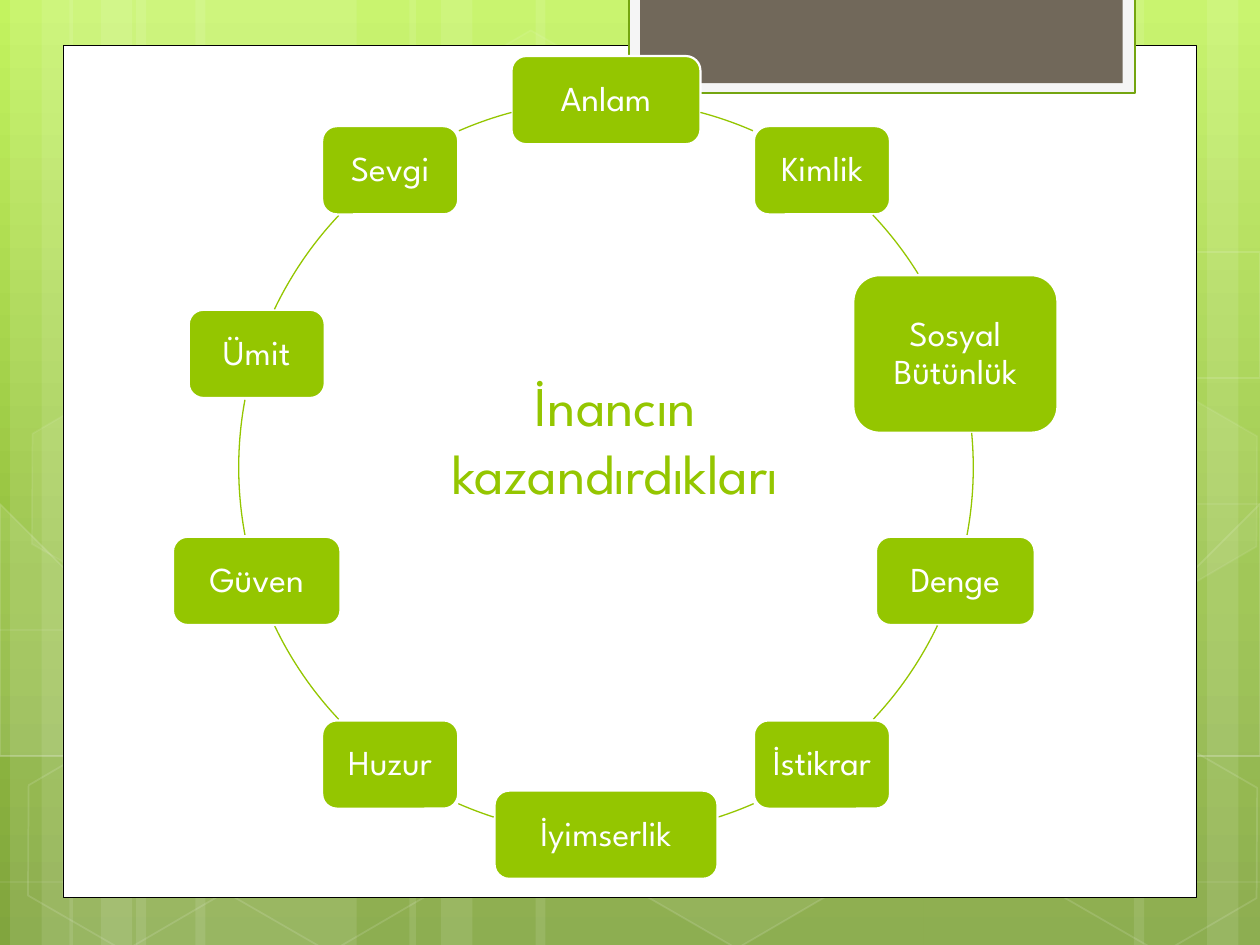
from math import cos, radians, sin

from lxml import etree
from pptx import Presentation
from pptx.dml.color import RGBColor
from pptx.enum.shapes import MSO_SHAPE
from pptx.enum.text import MSO_ANCHOR, PP_ALIGN
from pptx.oxml.ns import qn
from pptx.util import Inches, Pt

RECT = MSO_SHAPE.RECTANGLE
ROUND = MSO_SHAPE.ROUNDED_RECTANGLE
HEXAGON = MSO_SHAPE.HEXAGON
ARC = MSO_SHAPE.ARC
CENTER = PP_ALIGN.CENTER
MIDDLE = MSO_ANCHOR.MIDDLE
BOTTOM = MSO_ANCHOR.BOTTOM

FONT = "League Spartan"
GREEN = "94C600"
WHITE = "FFFFFF"
MID_X, MID_Y, RADIUS = 4.81, 3.71, 2.915

SKY = [(0, "C3F35F"), (62, "93BF3F"), (100, "81A53E")]

# left, width
BANDS = [(1.08, 1.75), (0.08, 0.5), (0.33, 0.83), (1.55, 1.75), (0.55, 0.5), (0.8, 0.83),
         (7.33, 1.75), (9.58, 0.5), (9, 0.83), (4.25, 3.08), (3.25, 0.5), (3.5, 0.83)]

# start point, then three points for each Bezier piece
WAVES = [
    [(0.07, 6.73), (0.61, 6.76), (1.15, 6.79), (1.9, 6.78), (2.65, 6.77), (3.58, 6.75),
     (4.58, 6.65), (5.58, 6.55), (7, 6.36), (7.92, 6.17), (8.83, 5.98), (9.77, 5.68),
     (10.07, 5.51)],
    [(0.07, 4.77), (0.36, 4.61), (0.65, 4.46), (1.21, 4.31), (1.78, 4.16), (2.59, 3.94),
     (3.47, 3.87), (4.36, 3.8), (5.44, 3.79), (6.54, 3.87), (7.64, 3.95), (9.47, 4.26),
     (10.07, 4.34)],
    [(0.06, 6.17), (1.27, 6.72), (2.47, 7.27), (3.34, 7.49)],
    [(0.07, 5.78), (0.38, 5.89), (0.7, 6), (1.28, 6.16), (1.86, 6.31), (2.73, 6.56),
     (3.57, 6.73), (4.4, 6.9), (5.45, 7.08), (6.28, 7.18), (7.11, 7.29), (8, 7.33),
     (8.53, 7.36), (9.05, 7.4), (9.19, 7.38), (9.45, 7.38), (9.71, 7.37), (9.89, 7.35),
     (10.07, 7.34)],
    [(2.42, 7.49), (2.6, 7.29), (2.78, 7.09), (3.02, 6.91), (3.26, 6.73), (3.6, 6.53),
     (3.88, 6.39), (4.16, 6.25), (4.33, 6.19), (4.7, 6.09), (5.06, 5.99), (5.73, 5.85),
     (6.08, 5.78), (6.44, 5.71), (6.49, 5.71), (6.8, 5.69), (7.11, 5.66), (7.6, 5.63),
     (7.94, 5.62), (8.29, 5.61), (8.86, 5.62), (8.86, 5.62), (9.08, 5.62), (9.3, 5.62),
     (9.53, 5.62), (9.71, 5.63), (9.88, 5.64), (10.06, 5.66)],
]

# left, top, fill opacity, line opacity
HEXAGONS = [(3.34, 0.36, 4, 8), (4.97, 5.89, 6, 12), (0.11, 5.91, 0, 12),
            (0.14, 3.12, 7, 8), (1.74, 5.92, 0, 12), (7.53, 4.53, 10, 12),
            (8.34, 5.93, 0, 12), (8.34, 3.14, 7, 8)]

# fill opacity, corners
CUT_HEXAGONS = [
    (10, [(0.08, 4.45), (0.19, 4.38), (0.96, 4.82), (0.95, 5.7), (0.2, 6.14), (0.08, 6.07)]),
    (4, [(9.26, 4.85), (10.01, 4.41), (10.09, 4.46), (10.09, 6.13), (10.02, 6.17),
         (9.26, 5.73)]),
    (0, [(9.26, 2.07), (10.01, 1.63), (10.1, 1.68), (10.09, 3.35), (10.02, 3.39),
         (9.26, 2.95)]),
]

# text, width, height, then the arc to the next box in degrees clockwise from the top
GAINS = [("Anlam", 1.5, 0.7, 14.9, 23.6),
         ("Kimlik", 1.08, 0.7, 46.6, 58.2),
         ("Sosyal Bütünlük", 1.62, 1.25, 84.6, 100.6),
         ("Denge", 1.26, 0.7, 115.5, 133.3),
         ("İstikrar", 1.08, 0.7, 156.3, 162.2),
         ("İyimserlik", 1.77, 0.7, 197.8, 203.7),
         ("Huzur", 1.08, 0.7, 226.7, 244.5),
         ("Güven", 1.33, 0.7, 259.4, 280.6),
         ("Ümit", 1.08, 0.7, 295.5, 313.3),
         ("Sevgi", 1.08, 0.7, 336.4, 345.1)]


def color(code):
    return RGBColor.from_string(code)


def paint(fill, code, alpha=100):
    """Fill with a colour at an opacity in percent; zero means no fill."""
    if not alpha:
        fill.background()
        return
    fill.solid()
    fill.fore_color.rgb = color(code)
    if alpha < 100:
        tint = fill._xPr.find(qn("a:solidFill"))[0]
        etree.SubElement(tint, qn("a:alpha"), val=str(alpha * 1000))


def style(shape, fill=WHITE, alpha=100, line=WHITE, weight=0, line_alpha=100):
    shape.shadow.inherit = False
    paint(shape.fill, fill, alpha)
    paint(shape.line.fill, line, line_alpha if weight else 0)
    if weight:
        shape.line.width = Pt(weight)


def add_shape(slide, kind, left, top, width, height, **look):
    shape = slide.shapes.add_shape(
        kind, Inches(left), Inches(top), Inches(width), Inches(height))
    style(shape, **look)
    return shape


def add_outline(slide, points, close, **look):
    pen = slide.shapes.build_freeform(*points[0], scale=Inches(1))
    pen.add_line_segments(points[1:], close=close)
    style(pen.convert_to_shape(), **look)


def trace(points, steps=8):
    """Points along a chain of cubic Bezier pieces."""
    track = [points[0]]
    for i in range(0, len(points) - 1, 3):
        for step in range(1, steps + 1):
            t = step / steps
            mix = ((1 - t) ** 3, 3 * t * (1 - t) ** 2, 3 * t * t * (1 - t), t ** 3)
            track.append(tuple(sum(m * p[axis] for m, p in zip(mix, points[i:i + 4]))
                               for axis in (0, 1)))
    return track


def set_text(shape, text, size, code, anchor):
    frame = shape.text_frame
    frame.word_wrap = True
    frame.vertical_anchor = anchor
    frame.text = text
    para = frame.paragraphs[0]
    para.alignment = CENTER
    font = para.runs[0].font
    font.name, font.size, font.color.rgb = FONT, Pt(size), color(code)
    return frame


def add_sky(slide):
    fill = slide.background.fill
    fill.gradient()
    fill.gradient_angle = 270
    stops = slide.element.find(".//" + qn("a:gsLst"))
    for stop in list(stops):
        stops.remove(stop)
    for place, code in SKY:
        stop = etree.SubElement(stops, qn("a:gs"), pos=str(place * 1000))
        etree.SubElement(stop, qn("a:srgbClr"), val=code)


def add_decor(slide):
    for left, width in BANDS:
        add_shape(slide, RECT, left, 0, width, 7.5, alpha=10)
    for wave in WAVES:
        add_outline(slide, trace(wave), False, alpha=0, weight=0.5, line_alpha=20)
    for left, top, alpha, edge in HEXAGONS:
        cell = add_shape(slide, HEXAGON, left, top, 1.75, 1.52,
                         alpha=alpha, weight=1, line_alpha=edge)
        cell.adjustments[0] = 0.285
        cell.rotation = 30
    for alpha, points in CUT_HEXAGONS:
        add_outline(slide, points, True, alpha=alpha, weight=1, line_alpha=12)


def add_panel(slide):
    add_shape(slide, RECT, 0.5, 0.36, 9, 6.76, line="000000", weight=0.5)
    add_shape(slide, RECT, 4.99, -0.02, 4.02, 0.76, fill="F5F5F5", line="74A510", weight=1.25)
    add_shape(slide, RECT, 5.08, -0.02, 3.83, 0.68, fill="71685A")


def add_box(slide, text, x, y, width, height):
    box = add_shape(slide, ROUND, x - width / 2, y - height / 2, width, height,
                    fill=GREEN, weight=1.25)
    frame = set_text(box, text, 20, WHITE, MIDDLE)
    frame.margin_left = frame.margin_right = Inches(0.08)
    frame.margin_top = frame.margin_bottom = Inches(0.08)
    frame.paragraphs[0].line_spacing = 0.9


def add_arc(slide, start, end):
    arc = add_shape(slide, ARC, MID_X - RADIUS, MID_Y - RADIUS, 2 * RADIUS, 2 * RADIUS,
                    alpha=0, line=GREEN, weight=0.75)
    for i, turn in enumerate((start, end)):
        # 60000 units a degree, counted from the right; adjustments are in 100000ths
        arc.adjustments[i] = (turn - 90) % 360 * 0.6


def add_ring(slide):
    for i, (text, width, height, start, end) in enumerate(GAINS):
        turn = radians(i * 360 / len(GAINS))
        add_box(slide, text, MID_X + RADIUS * sin(turn), MID_Y - RADIUS * cos(turn),
                width, height)
        add_arc(slide, start, end)


def add_title(slide):
    title = slide.shapes.add_textbox(Inches(3.19), Inches(2.33), Inches(3.39), Inches(1.73))
    set_text(title, "İnancın kazandırdıkları", 32, GREEN, BOTTOM)


def main():
    deck = Presentation()
    deck.slide_width, deck.slide_height = Inches(10), Inches(7.5)
    slide = deck.slides.add_slide(deck.slide_layouts[6])
    add_sky(slide)
    add_decor(slide)
    add_panel(slide)
    add_ring(slide)
    add_title(slide)
    deck.save("out.pptx")


if __name__ == "__main__":
    main()
